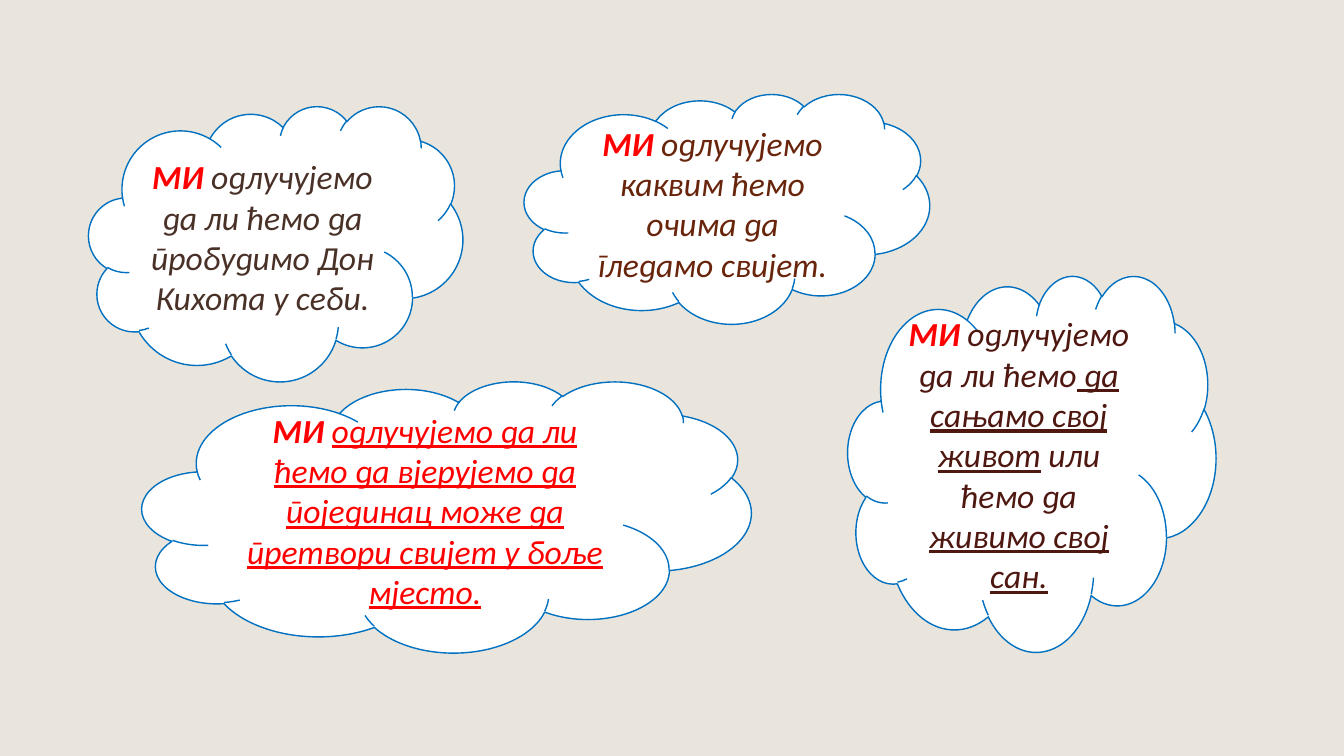
from dataclasses import dataclass

from pptx import Presentation
from pptx.dml.color import RGBColor
from pptx.enum.shapes import MSO_SHAPE
from pptx.enum.text import MSO_ANCHOR, PP_ALIGN
from pptx.slide import Slide
from pptx.text.text import _Paragraph
from pptx.util import Emu, Pt

EMU_PER_PX = 9144
FONT = "Calibri"
LANGUAGE = "sr-Cyrl-BA"
COLOURS = {
    "page": "E9E5DC",
    "cloud": "FFFFFF",
    "outline": "0070C0",
    "red": "FF0000",
    "umber": "4A3128",
    "rust": "69240C",
    "maroon": "4E1710",
}


@dataclass(frozen=True)
class Phrase:
    text: str
    underline: bool = False


@dataclass(frozen=True)
class Cloud:
    left: int
    top: int
    width: int
    height: int
    colour: str
    phrases: tuple[Phrase, ...]


CLOUDS = (
    Cloud(88, 105, 371, 273, "umber",
          (Phrase("одлучујемо да ли ћемо да пробудимо Дон Кихота у себи."),)),
    Cloud(520, 93, 402, 228, "rust",
          (Phrase("одлучујемо каквим ћемо очима да гледамо свијет."),)),
    Cloud(841, 273, 365, 373, "maroon",
          (Phrase("одлучујемо да ли ћемо"),
           Phrase(" да сањамо свој живот", underline=True),
           Phrase(" или ћемо да "),
           Phrase("живимо свој сан.", underline=True))),
    Cloud(141, 378, 604, 269, "red",
          (Phrase("одлучујемо да ли ћемо да вјерујемо да појединац може да "
                  "претвори свијет у боље мјесто.", underline=True),)),
)


def px(length: int) -> Emu:
    return Emu(length * EMU_PER_PX)


def colour(name: str) -> RGBColor:
    return RGBColor.from_string(COLOURS[name])


def add_text(para: _Paragraph, text: str, *, fill: str,
             bold: bool = False, underline: bool = False) -> None:
    span = para.add_run()
    span.text = text
    span.font.name = FONT
    span.font.size = Pt(24)
    span.font.italic = True
    span.font.bold = bold
    span.font.underline = underline
    span.font.color.rgb = colour(fill)
    span._r.get_or_add_rPr().set("lang", LANGUAGE)


def draw_cloud(page: Slide, cloud: Cloud) -> None:
    box = page.shapes.add_shape(MSO_SHAPE.CLOUD, px(cloud.left), px(cloud.top),
                                px(cloud.width), px(cloud.height))
    box.shadow.inherit = False
    box.fill.solid()
    box.fill.fore_color.rgb = colour("cloud")
    box.line.color.rgb = colour("outline")
    box.line.width = Pt(1)
    box.text_frame.word_wrap = True
    box.text_frame.vertical_anchor = MSO_ANCHOR.MIDDLE
    para = box.text_frame.paragraphs[0]
    para.alignment = PP_ALIGN.CENTER
    add_text(para, "МИ ", fill="red", bold=True)
    for phrase in cloud.phrases:
        add_text(para, phrase.text, fill=cloud.colour, underline=phrase.underline)


def main() -> None:
    deck = Presentation()
    deck.slide_width, deck.slide_height = px(1333), px(750)
    page = deck.slides.add_slide(deck.slide_layouts[6])
    page.background.fill.solid()
    page.background.fill.fore_color.rgb = colour("page")
    for cloud in CLOUDS:
        draw_cloud(page, cloud)
    deck.save("out.pptx")


if __name__ == "__main__":
    main()
